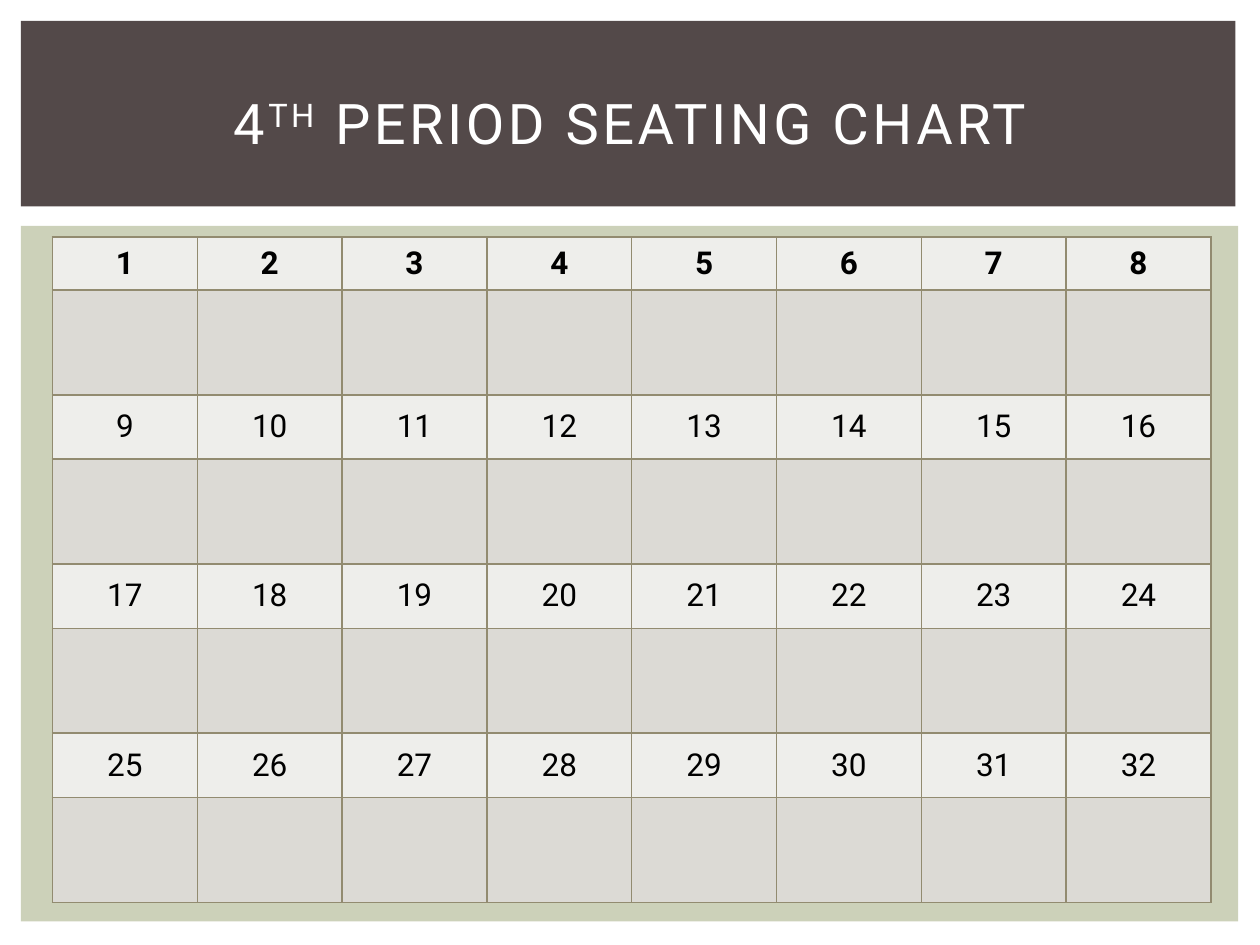
import pptx
import pptx.util
import pptx.dml.color
import pptx.enum.shapes
import pptx.enum.text
import pptx.oxml.ns
import lxml.etree

Pt = pptx.util.Pt
RGBColor = pptx.dml.color.RGBColor
MIDDLE = pptx.enum.text.MSO_ANCHOR.MIDDLE
CENTER = pptx.enum.text.PP_ALIGN.CENTER

WHITE = RGBColor(0xFF, 0xFF, 0xFF)
BLACK = RGBColor(0, 0, 0)
BROWN = RGBColor(0x53, 0x49, 0x49)
SAGE = RGBColor(0xCC, 0xD1, 0xB9)
PALE = RGBColor(0xEE, 0xEE, 0xEB)
GREY = RGBColor(0xDC, 0xDA, 0xD5)
OLIVE = RGBColor(0x92, 0x8B, 0x70)

FONT = "Roboto"
COLS = 8
HEAD, LABEL, SEAT = 30.2, 36.8, 59.9
ROWS = [HEAD, SEAT] + [LABEL, SEAT] * 3


def add_panel(slide, box, color):
    panel = slide.shapes.add_shape(
        pptx.enum.shapes.MSO_SHAPE.RECTANGLE, *map(Pt, box))
    panel.shadow.inherit = False
    panel.fill.solid()
    panel.fill.fore_color.rgb = color
    panel.line.fill.background()


def style_run(run, size, color, bold=False):
    run.font.name = FONT
    run.font.size = Pt(size)
    run.font.color.rgb = color
    run.font.bold = bold


def add_title(slide, box):
    left, top, width, height = box
    add_panel(slide, box, BROWN)
    title = slide.shapes.add_textbox(
        Pt(left + 18), Pt(top + 16), Pt(width - 34), Pt(height - 23))
    frame = title.text_frame
    frame.word_wrap = True
    frame.vertical_anchor = MIDDLE
    line = frame.paragraphs[0]
    line.alignment = CENTER
    for text, raised in (("4", 0), ("TH", 30), (" PERIOD SEATING CHART", 0)):
        run = line.add_run()
        run.text = text
        style_run(run, 32, WHITE)
        props = run.font._element
        props.set("spc", "200")
        if raised:
            props.set("baseline", str(raised * 1000))


def add_borders(cell):
    props = cell._tc.get_or_add_tcPr()
    qn = pptx.oxml.ns.qn
    for side in ("a:lnL", "a:lnR", "a:lnT", "a:lnB"):
        line = lxml.etree.SubElement(props, qn(side), w=str(Pt(1)))
        fill = lxml.etree.SubElement(line, qn("a:solidFill"))
        lxml.etree.SubElement(fill, qn("a:srgbClr"), val=str(OLIVE))


def add_seats(slide, box):
    left, top, width, height = box
    add_panel(slide, box, SAGE)
    wide = 662
    table = slide.shapes.add_table(
        len(ROWS), COLS, Pt(left + 18), Pt(top + 6.5),
        Pt(wide), Pt(sum(ROWS))).table
    for col in table.columns:
        col.width = Pt(wide / COLS)
    for row, tall in enumerate(ROWS):
        table.rows[row].height = Pt(tall)
        for col in range(COLS):
            cell = table.cell(row, col)
            add_borders(cell)
            cell.fill.solid()
            cell.fill.fore_color.rgb = GREY if row % 2 else PALE
            # Number rows alternate with empty name rows
            if row % 2 == 0:
                cell.vertical_anchor = MIDDLE
                line = cell.text_frame.paragraphs[0]
                line.text = str(row // 2 * COLS + col + 1)
                line.alignment = CENTER
                style_run(line.runs[0], 18, BLACK, bold=row == 0)


def main():
    deck = pptx.Presentation()
    deck.slide_width, deck.slide_height = Pt(720), Pt(540)
    slide = deck.slides.add_slide(deck.slide_layouts[6])
    # Lower panel with the seating grid
    add_seats(slide, (12, 129, 695.5, 397.5))
    # Title band
    add_title(slide, (12, 12, 694, 106))
    deck.save("out.pptx")


if __name__ == "__main__":
    main()
